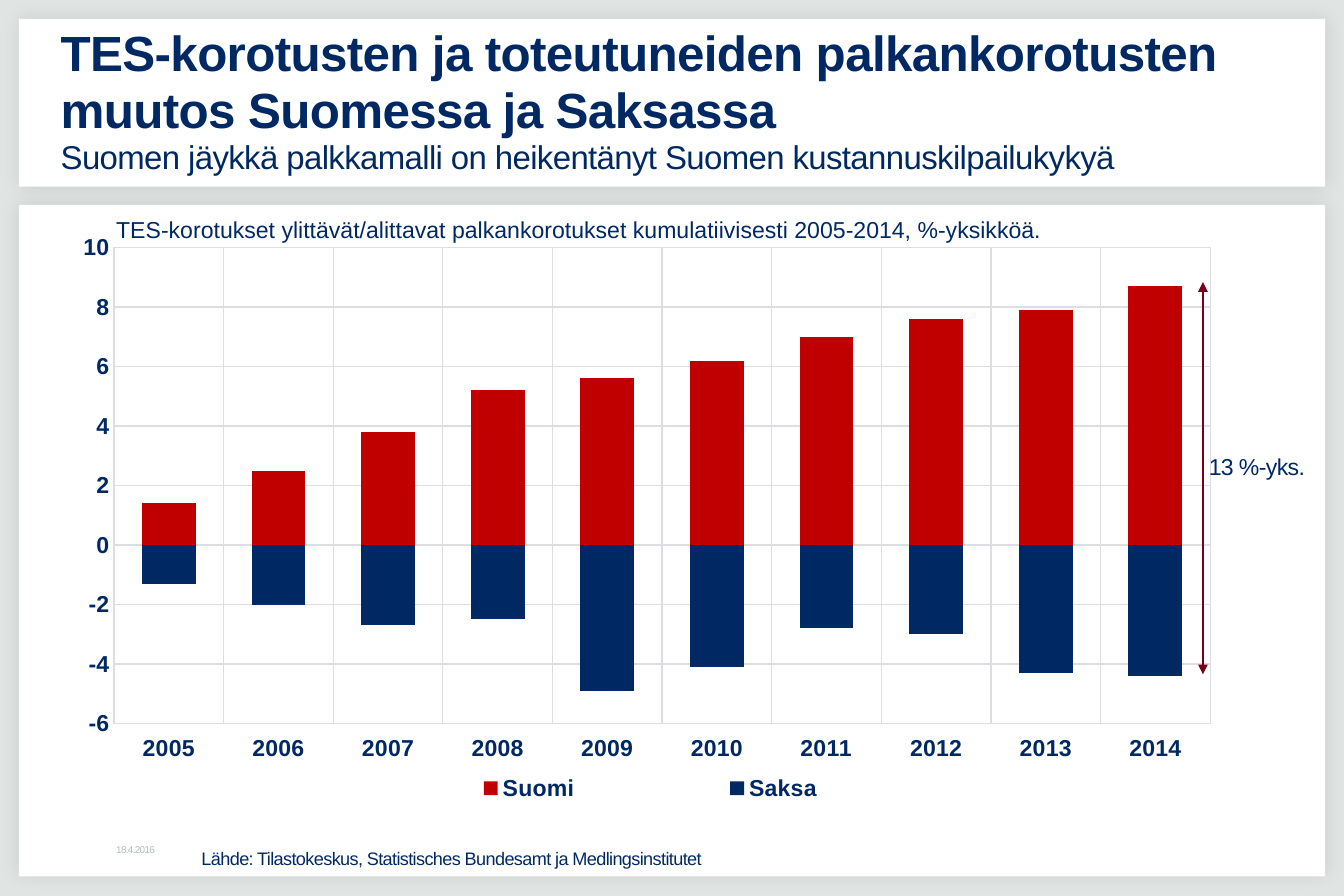
from dataclasses import dataclass

import pptx
import pptx.chart.data
import pptx.dml.color
import pptx.enum.chart
import pptx.enum.shapes
import pptx.enum.text
import pptx.oxml
import pptx.oxml.ns
import pptx.util
from lxml import etree

Pt = pptx.util.Pt
qn = pptx.oxml.ns.qn
FONT = "Arial"
COLORS = {
    "background": "E0E5E3",
    "panel": "FFFFFF",
    "navy": "002964",
    "red": "C00000",
    "arrow": "7A001A",
    "grid": "DEDDE1",
    "date": "B1BEB9",
}
YEARS = [str(year) for year in range(2005, 2015)]


@dataclass(frozen=True)
class Box:
    left: float
    top: float
    width: float
    height: float

    def lengths(self) -> tuple:
        return Pt(self.left), Pt(self.top), Pt(self.width), Pt(self.height)


@dataclass(frozen=True)
class Label:
    text: str
    box: Box
    size: float
    color: str = "navy"
    spacing: float = -0.4
    middle: bool = False


@dataclass(frozen=True)
class Country:
    name: str
    color: str
    values: tuple


PANELS = [Box(11.5, 11.5, 793.5, 102), Box(11.5, 124.5, 793.5, 408)]
TITLE_BOX = Box(33.84, 22.32, 748.8, 79.2)
CHART_BOX = Box(33.84, 136.08, 708.48, 357.12)
LABELS = [
    Label("18.4.2016", Box(67.68, 510.48, 102.24, 11.52), 6, "date", middle=True),
    Label("Lähde: Tilastokeskus, Statistisches Bundesamt ja Medlingsinstitutet",
          Box(119.52, 511.92, 351.36, 18.72), 11),
    Label("13 %-yks.", Box(731.52, 272.16, 67.68, 23.04), 14),
    Label("TES-korotukset ylittävät/alittavat palkankorotukset kumulatiivisesti "
          "2005-2014, %-yksikköä.", Box(67.68, 128.16, 680.4, 23.04), 14, spacing=0),
]
COUNTRIES = [
    Country("Suomi", "red", (1.4, 2.5, 3.8, 5.2, 5.6, 6.2, 7, 7.6, 7.9, 8.7)),
    Country("Saksa", "navy", (-1.3, -2, -2.7, -2.5, -4.9, -4.1, -2.8, -3, -4.3, -4.4)),
]


def rgb(name: str) -> pptx.dml.color.RGBColor:
    return pptx.dml.color.RGBColor.from_string(COLORS[name])


def style_font(font, size: float, color: str = "navy", bold: bool = False) -> None:
    font.name = FONT
    font.size = Pt(size)
    font.bold = bold
    font.color.rgb = rgb(color)


def add_run(paragraph, text: str, size: float, color: str = "navy",
            bold: bool = False, spacing: float = -0.4) -> None:
    run = paragraph.add_run()
    run.text = text
    style_font(run.font, size, color, bold)
    if spacing:
        run._r.get_or_add_rPr().set("spc", str(round(spacing * 100)))


def add_panel(slide, box: Box) -> None:
    panel = slide.shapes.add_shape(pptx.enum.shapes.MSO_SHAPE.RECTANGLE, *box.lengths())
    panel.shadow.inherit = False
    panel.fill.solid()
    panel.fill.fore_color.rgb = rgb("panel")
    panel.line.fill.background()
    effects = panel._element.spPr.find(qn("a:effectLst"))
    shadow = etree.SubElement(effects, qn("a:outerShdw"), blurRad=str(Pt(10)),
                              dist="0", dir="2700000", algn="ctr", rotWithShape="0")
    shade = etree.SubElement(shadow, qn("a:srgbClr"), val="000000")
    etree.SubElement(shade, qn("a:alpha"), val="10000")


def fill_title(slide) -> None:
    title = slide.shapes.title
    slide.shapes._spTree.append(title._element)
    title.left, title.top, title.width, title.height = TITLE_BOX.lengths()
    frame = title.text_frame
    frame.word_wrap = True
    frame.auto_size = pptx.enum.text.MSO_AUTO_SIZE.NONE
    frame.vertical_anchor = pptx.enum.text.MSO_ANCHOR.MIDDLE
    frame.margin_left, frame.margin_right = Pt(3), Pt(7.2)
    frame.margin_top = frame.margin_bottom = Pt(3.6)
    heading = frame.paragraphs[0]
    heading.alignment = pptx.enum.text.PP_ALIGN.LEFT
    heading.line_spacing = 0.95
    add_run(heading, "TES-korotusten ja toteutuneiden palkankorotusten muutos "
            "Suomessa ja Saksassa", 30, bold=True)
    heading.add_line_break()
    add_run(heading, "Suomen jäykkä palkkamalli on heikentänyt Suomen "
            "kustannuskilpailukykyä", 20)


def add_label(slide, label: Label) -> None:
    frame = slide.shapes.add_textbox(*label.box.lengths()).text_frame
    frame.word_wrap = True
    frame.margin_left = frame.margin_right = Pt(2.88)
    frame.margin_top = frame.margin_bottom = Pt(2.88)
    if label.middle:
        frame.vertical_anchor = pptx.enum.text.MSO_ANCHOR.MIDDLE
    add_run(frame.paragraphs[0], label.text, label.size, label.color,
            spacing=label.spacing)


def place(element, area: tuple, inner: bool = False) -> None:
    for old in element.findall(qn("c:layout")):
        element.remove(old)
    layout = etree.Element(qn("c:layout"))
    manual = etree.SubElement(layout, qn("c:manualLayout"))
    if inner:
        etree.SubElement(manual, qn("c:layoutTarget"), val="inner")
    for key in ("xMode", "yMode"):
        etree.SubElement(manual, qn(f"c:{key}"), val="edge")
    for key, value in zip("xywh", area):
        etree.SubElement(manual, qn(f"c:{key}"), val=str(value))
    if inner:
        element.insert(0, layout)
    else:
        element.find(qn("c:legendPos")).addnext(layout)


def style_axis(axis) -> None:
    axis.major_tick_mark = axis.minor_tick_mark = pptx.enum.chart.XL_TICK_MARK.NONE
    axis.has_major_gridlines = True
    for line in (axis.major_gridlines.format.line, axis.format.line):
        line.color.rgb = rgb("grid")
        line.width = Pt(0.75)
    style_font(axis.tick_labels.font, 14, bold=True)


def add_raise_chart(slide) -> None:
    data = pptx.chart.data.CategoryChartData()
    data.categories = YEARS
    for country in COUNTRIES:
        data.add_series(country.name, country.values)
    chart = slide.shapes.add_chart(pptx.enum.chart.XL_CHART_TYPE.COLUMN_CLUSTERED,
                                   *CHART_BOX.lengths(), data).chart
    chart.has_title = False
    style_font(chart.font, 10)
    plot = chart.plots[0]
    plot.gap_width, plot.overlap, plot.vary_by_categories = 104, 100, False
    for series, country in zip(plot.series, COUNTRIES):
        series.invert_if_negative = False
        series.format.fill.solid()
        series.format.fill.fore_color.rgb = rgb(country.color)
    years, points = chart.category_axis, chart.value_axis
    style_axis(years)
    years.tick_label_position = pptx.enum.chart.XL_TICK_LABEL_POSITION.LOW
    style_axis(points)
    points.format.line.fill.background()
    points.minimum_scale, points.maximum_scale, points.major_unit = -6, 10, 2
    points.tick_labels.number_format = "General"
    points.tick_labels.number_format_is_linked = False
    chart.has_legend = True
    chart.legend.position = pptx.enum.chart.XL_LEGEND_POSITION.BOTTOM
    chart.legend.include_in_layout = False
    style_font(chart.legend.font, 14, bold=True)
    place(chart.legend._element, (0.24, 0.92, 0.54, 0.08))
    place(chart._chartSpace.chart.plotArea, (0.05, 0.04, 0.94, 0.81), inner=True)


def add_gap_arrow(slide) -> None:
    arrow = slide.shapes.add_connector(pptx.enum.shapes.MSO_CONNECTOR.STRAIGHT,
                                       Pt(730.8), Pt(171.36), Pt(730.8), Pt(409.68))
    arrow.line.color.rgb = rgb("arrow")
    arrow.line.width = Pt(1.5)
    for end in ("headEnd", "tailEnd"):
        etree.SubElement(arrow.line._get_or_add_ln(), qn(f"a:{end}"), type="triangle")
    etree.SubElement(arrow._element.spPr, qn("a:effectLst"))


def main() -> None:
    deck = pptx.Presentation()
    deck.slide_width, deck.slide_height = Pt(816.48), Pt(544.32)
    slide = deck.slides.add_slide(deck.slide_layouts[5])
    slide.background.fill.solid()
    slide.background.fill.fore_color.rgb = rgb("background")
    for panel in PANELS:
        add_panel(slide, panel)
    add_raise_chart(slide)
    fill_title(slide)
    add_gap_arrow(slide)
    for label in LABELS:
        add_label(slide, label)
    deck.save("out.pptx")


if __name__ == "__main__":
    main()
